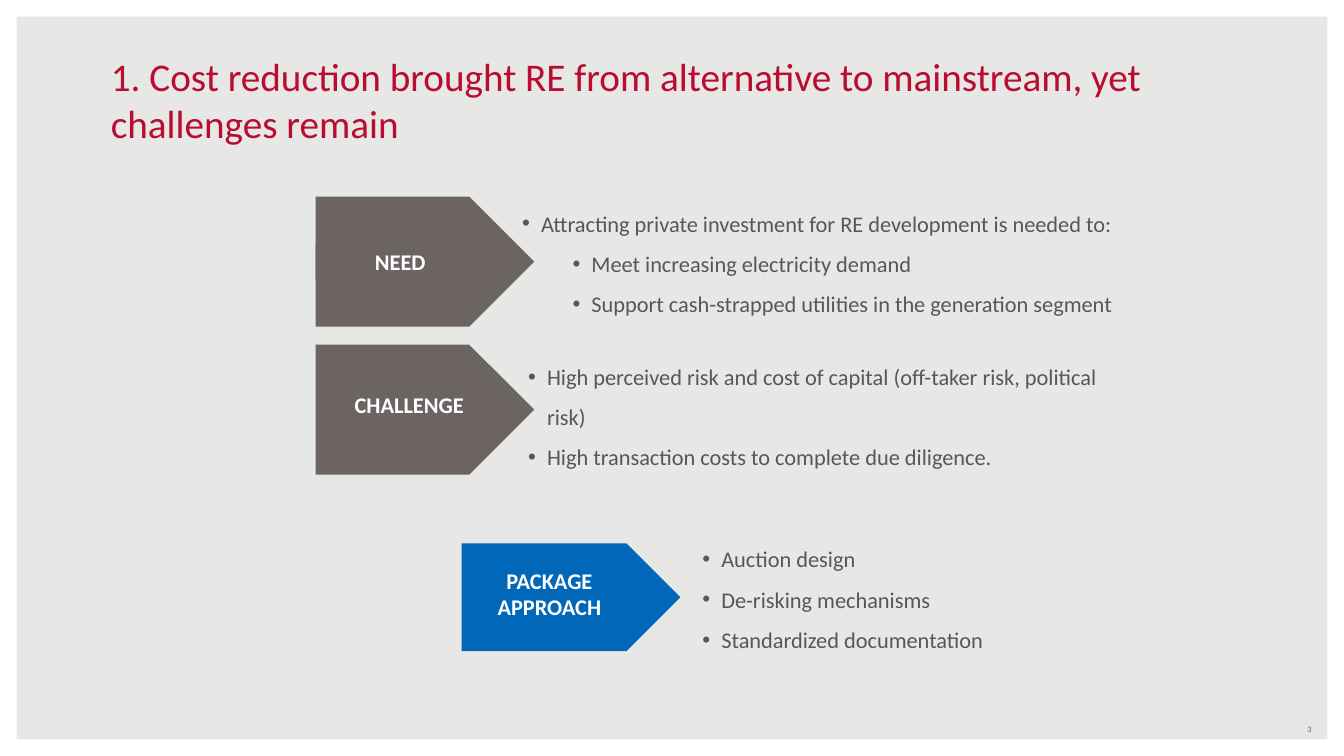
from dataclasses import dataclass
from typing import NamedTuple

from lxml.etree import SubElement
from pptx import Presentation
from pptx.dml.color import RGBColor
from pptx.enum.shapes import MSO_SHAPE
from pptx.enum.text import MSO_ANCHOR, MSO_AUTO_SIZE, PP_ALIGN
from pptx.oxml.ns import qn
from pptx.util import Pt


@dataclass(frozen=True)
class Theme:
    font: str = "Calibri"
    back: str = "E7E7E5"
    white: str = "FFFFFF"
    red: str = "BA0C2F"
    gray: str = "6C6463"
    blue: str = "0067B9"
    ink: str = "555759"
    head: float = 28
    body: float = 16
    foot: float = 6


class Box(NamedTuple):
    left: float
    top: float
    width: float
    height: float

    def points(self) -> tuple:
        return tuple(Pt(side) for side in self)


class Item(NamedTuple):
    text: str
    level: int = 0


@dataclass(frozen=True)
class Step:
    name: str
    color: str
    arrow: Box
    label: Box
    notes: Box
    items: tuple[Item, ...]


THEME = Theme()
WIDTH, HEIGHT = 960, 540
HANG, INDENT = 13.5, 36

STEPS = (
    Step("PACKAGE APPROACH", THEME.blue,
         Box(329.8, 388.1, 156.2, 77), Box(331.9, 401, 121, 46),
         Box(498.2, 376.5, 208.8, 120.2),
         (Item("Auction design"),
          Item("De-risking mechanisms"),
          Item("Standardized documentation"))),
    Step("CHALLENGE", THEME.gray,
         Box(225.4, 246.2, 156.2, 92.9), Box(231.8, 275.8, 121, 26.6),
         Box(373.7, 246.2, 424.1, 91.4),
         (Item("High perceived risk and cost of capital (off-taker risk, political risk)"),
          Item("High transaction costs to complete due diligence."))),
    Step("NEED", THEME.gray,
         Box(225.4, 140.4, 156.2, 92.9), Box(225.4, 173.5, 121, 26.6),
         Box(369.4, 136.8, 434.9, 91.4),
         (Item("Attracting private investment for RE development is needed to:"),
          Item("Meet increasing electricity demand", 1),
          Item("Support cash-strapped utilities in the generation segment", 1))),
)


def add_run(para, text: str, size: float, color: str, bold: bool = False) -> None:
    run = para.add_run()
    run.text = text
    run.font.name = THEME.font
    run.font.size = Pt(size)
    run.font.bold = bold
    run.font.color.rgb = RGBColor.from_string(color)


def add_shape(shapes, kind: MSO_SHAPE, box: Box, color: str):
    shape = shapes.add_shape(kind, *box.points())
    shape.shadow.inherit = False
    shape.fill.solid()
    shape.fill.fore_color.rgb = RGBColor.from_string(color)
    shape.line.fill.background()
    return shape


def add_bullet(para, level: int) -> None:
    props = para._p.get_or_add_pPr()
    props.set("marL", str(Pt(HANG + level * INDENT)))
    props.set("indent", str(-Pt(HANG)))
    tint = SubElement(props, qn("a:buClr"))
    SubElement(tint, qn("a:srgbClr"), val=THEME.ink)
    SubElement(props, qn("a:buFont"), typeface="Arial")
    SubElement(props, qn("a:buChar"), char="•")


def add_notes(shapes, step: Step) -> None:
    frame = shapes.add_textbox(*step.notes.points()).text_frame
    frame.word_wrap = True
    frame.margin_left = frame.margin_top = frame.margin_bottom = Pt(3.6)
    frame.margin_right = Pt(0)
    for index, item in enumerate(step.items):
        para = frame.add_paragraph() if index else frame.paragraphs[0]
        para.level = item.level
        para.line_spacing = 1.5
        add_bullet(para, item.level)
        add_run(para, item.text, THEME.body, THEME.ink)


def add_step(shapes, step: Step) -> None:
    add_notes(shapes, step)
    group = shapes.add_group_shape().shapes
    add_shape(group, MSO_SHAPE.PENTAGON, step.arrow, step.color)
    label = add_shape(group, MSO_SHAPE.RECTANGLE, step.label, step.color)
    frame = label.text_frame
    frame.word_wrap = True
    frame.vertical_anchor = MSO_ANCHOR.MIDDLE
    para = frame.paragraphs[0]
    para.alignment = PP_ALIGN.CENTER
    add_run(para, step.name, THEME.body, THEME.white, True)


def add_title(title, text: str) -> None:
    title.left, title.top, title.width, title.height = Box(72, 67, 816, 41).points()
    frame = title.text_frame
    frame.word_wrap = True
    frame.auto_size = MSO_AUTO_SIZE.NONE
    frame.vertical_anchor = MSO_ANCHOR.BOTTOM
    para = frame.paragraphs[0]
    para.alignment = PP_ALIGN.LEFT
    add_run(para, text, THEME.head, THEME.red)


def add_number(shapes, text: str) -> None:
    frame = shapes.add_textbox(*Box(720, 513.4, 224, 14.4).points()).text_frame
    frame.word_wrap = True
    frame.vertical_anchor = MSO_ANCHOR.MIDDLE
    para = frame.paragraphs[0]
    para.alignment = PP_ALIGN.RIGHT
    add_run(para, text, THEME.foot, THEME.gray)


def main() -> None:
    deck = Presentation()
    deck.slide_width, deck.slide_height = Pt(WIDTH), Pt(HEIGHT)
    slide = deck.slides.add_slide(deck.slide_layouts[5])
    slide.background.fill.solid()
    slide.background.fill.fore_color.rgb = RGBColor.from_string(THEME.back)
    border = add_shape(slide.shapes, MSO_SHAPE.FRAME, Box(0, 0, WIDTH, HEIGHT), THEME.white)
    border.adjustments[0] = 0.022
    add_title(slide.shapes.title,
              "1. Cost reduction brought RE from alternative to mainstream, yet challenges remain")
    add_number(slide.shapes, "3")
    for step in STEPS:
        add_step(slide.shapes, step)
    deck.save("out.pptx")


if __name__ == "__main__":
    main()
